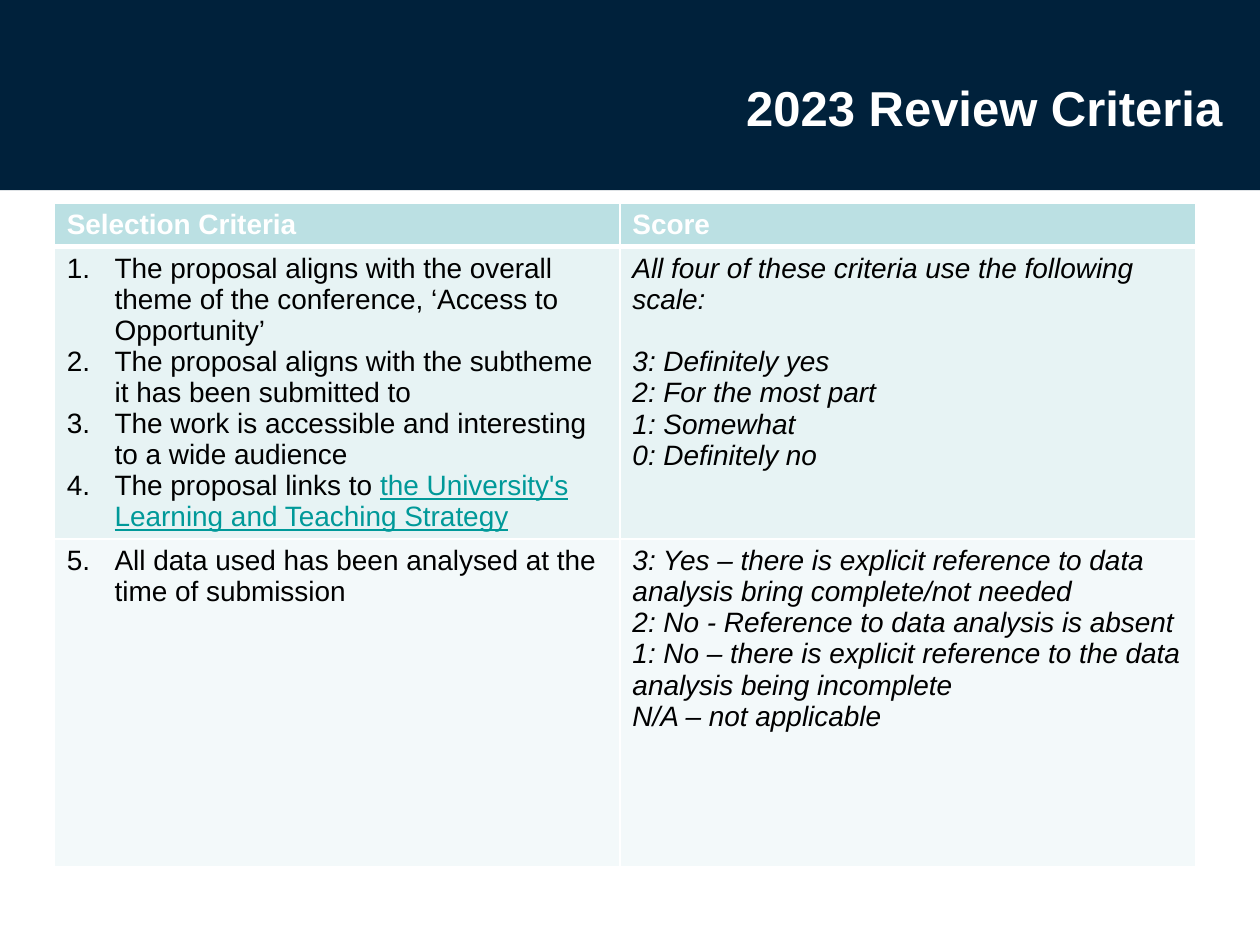
from dataclasses import dataclass
from typing import Optional

from lxml.etree import SubElement
from pptx import Presentation
from pptx.dml.color import RGBColor
from pptx.enum.shapes import MSO_SHAPE as Shape
from pptx.enum.text import MSO_ANCHOR as Anchor, PP_ALIGN as Align
from pptx.oxml.ns import qn
from pptx.util import Inches, Pt

COLORS = {
    "navy": "00213B", "white": "FFFFFF", "black": "000000", "link": "009999",
    "header": "BBE0E3", "band": "E7F3F4", "pale": "F3F9FA",
}
FONT = "Arial"
COLUMN_WIDTHS = (4.49, 4.57)
ROW_HEIGHTS = (0.3, 2.07, 2.6)
ROW_FILLS = ("header", "band", "pale")
INDENT = Inches(0.38)


@dataclass(frozen=True)
class Span:
    text: str
    color: str = "black"
    bold: bool = False
    italic: bool = False
    underline: bool = False
    size: int = 16


@dataclass(frozen=True)
class Para:
    spans: tuple[Span, ...]
    number_from: Optional[int] = None
    space_before: int = 0


def heading(text: str) -> list[Para]:
    return [Para((Span(text, "white", bold=True),))]


def criterion(*spans: Span, start: int = 1) -> Para:
    return Para(spans, number_from=start)


def score(text: str, space_before: int = 0) -> Para:
    return Para((Span(text, italic=True),), space_before=space_before)


CELLS = (
    (heading("Selection Criteria"), heading("Score")),
    (
        [
            criterion(Span("The proposal aligns with the overall theme of the "
                           "conference, ‘Access to Opportunity’")),
            criterion(Span("The proposal aligns with the subtheme it has been submitted to")),
            criterion(Span("The work is accessible and interesting to a wide audience")),
            criterion(Span("The proposal links to "),
                      Span("the University's Learning and Teaching Strategy",
                           "link", underline=True)),
        ],
        [
            score("All four of these criteria use the following scale:"),
            score("3: Definitely yes", space_before=18),
            score("2: For the most part"),
            score("1: Somewhat"),
            score("0: Definitely no"),
        ],
    ),
    (
        [criterion(Span("All data used has been analysed at the time of submission"), start=5)],
        [
            score("3: Yes – there is explicit reference to data analysis bring "
                  "complete/not needed"),
            score("2: No - Reference to data analysis is absent"),
            score("1: No – there is explicit reference to the data analysis being incomplete"),
            score("N/A – not applicable"),
        ],
    ),
)


def rgb(name: str) -> RGBColor:
    return RGBColor.from_string(COLORS[name])


def add_span(paragraph, span: Span) -> None:
    run = paragraph.add_run()
    run.text = span.text
    font = run.font
    font.name, font.size = FONT, Pt(span.size)
    font.bold, font.italic, font.underline = span.bold, span.italic, span.underline
    font.color.rgb = rgb(span.color)


def number_paragraph(paragraph, start: int) -> None:
    properties = paragraph._p.get_or_add_pPr()
    properties.set("marL", str(INDENT))
    properties.set("indent", str(-INDENT))
    SubElement(properties, qn("a:buFont"), typeface="+mj-lt")
    SubElement(properties, qn("a:buAutoNum"), type="arabicPeriod", startAt=str(start))


def write_paragraphs(frame, paras: list[Para]) -> None:
    for index, para in enumerate(paras):
        paragraph = frame.add_paragraph() if index else frame.paragraphs[0]
        if para.space_before:
            paragraph.space_before = Pt(para.space_before)
        if para.number_from is not None:
            number_paragraph(paragraph, para.number_from)
        for span in para.spans:
            add_span(paragraph, span)


def set_borders(cell, top: int, bottom: int) -> None:
    """Draw white cell borders; widths are in points."""
    properties = cell._tc.get_or_add_tcPr()
    for side, width in (("L", 1), ("R", 1), ("T", top), ("B", bottom)):
        line = SubElement(properties, qn(f"a:ln{side}"), w=str(Pt(width)))
        fill = SubElement(line, qn("a:solidFill"))
        SubElement(fill, qn("a:srgbClr"), val=COLORS["white"])


def add_title(page) -> None:
    title = page.shapes.title
    title.left, title.top = Inches(1.3), Inches(0.04)
    title.width, title.height = Inches(8.5), Inches(1.61)
    title.text_frame.vertical_anchor = Anchor.MIDDLE
    paragraph = title.text_frame.paragraphs[0]
    paragraph.alignment = Align.RIGHT
    add_span(paragraph, Span("2023 Review Criteria", "white", bold=True, size=28))

    banner = page.shapes.add_shape(Shape.RECTANGLE, 0, 0, Inches(10), Inches(1.51))
    banner.shadow.inherit = False
    banner.fill.solid()
    banner.fill.fore_color.rgb = rgb("navy")
    banner.line.fill.background()
    title.element.addprevious(banner.element)  # banner sits behind the title


def add_criteria_table(page) -> None:
    table = page.shapes.add_table(
        len(ROW_HEIGHTS), len(COLUMN_WIDTHS), Inches(0.43), Inches(1.61),
        Inches(sum(COLUMN_WIDTHS)), Inches(sum(ROW_HEIGHTS))).table
    for column, width in zip(table.columns, COLUMN_WIDTHS):
        column.width = Inches(width)
    for index, (height, fill, contents) in enumerate(zip(ROW_HEIGHTS, ROW_FILLS, CELLS)):
        table.rows[index].height = Inches(height)
        for cell, paras in zip(table.rows[index].cells, contents):
            set_borders(cell, top=3 if index == 1 else 1, bottom=3 if index == 0 else 1)
            cell.fill.solid()
            cell.fill.fore_color.rgb = rgb(fill)
            write_paragraphs(cell.text_frame, paras)


def main() -> None:
    deck = Presentation()
    deck.slide_width, deck.slide_height = Inches(10), Inches(7.5)
    page = deck.slides.add_slide(deck.slide_layouts.get_by_name("Title Only"))
    add_title(page)
    add_criteria_table(page)
    deck.save("out.pptx")


if __name__ == "__main__":
    main()
